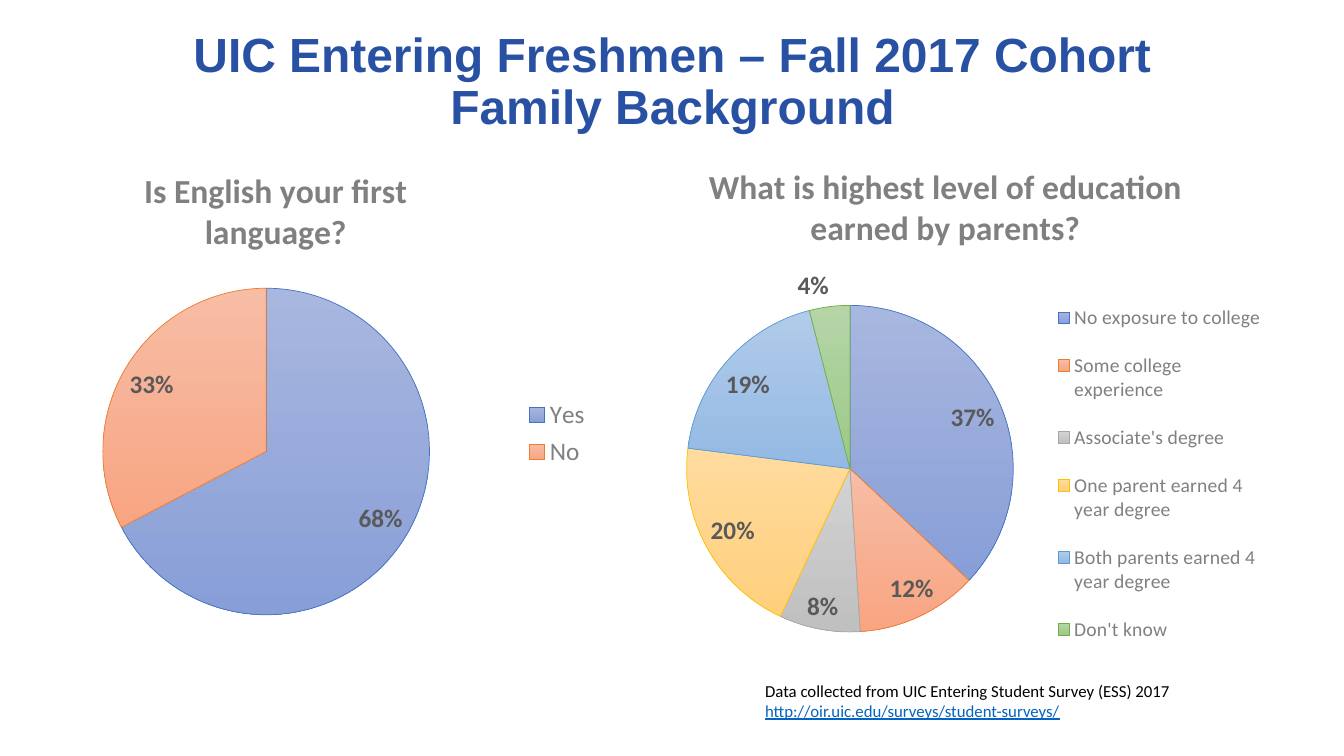
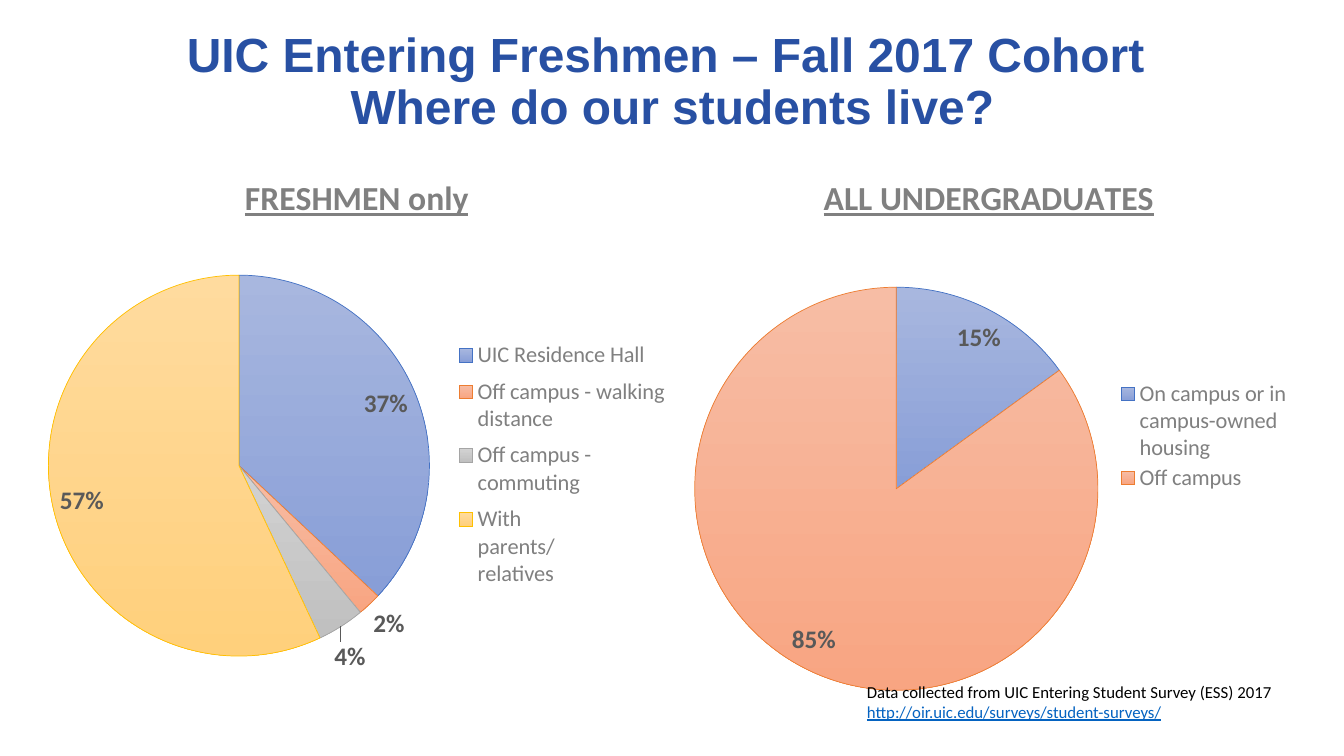
import dataclasses
import lxml.etree
import pptx
import pptx.chart.data
import pptx.dml.color
import pptx.enum.chart
import pptx.enum.text
import pptx.oxml.ns
import pptx.util

Inches = pptx.util.Inches
Pt = pptx.util.Pt


@dataclasses.dataclass(frozen=True)
class Theme:
    """Colours, fonts and type sizes shared by the slides."""
    navy: str = "2850A3"
    grey: str = "808080"
    dark: str = "595959"
    black: str = "000000"
    link: str = "0563C1"
    head: str = "Arial"
    body: str = "Calibri"
    title: float = 34.2
    topic: int = 24
    label: int = 18
    note: int = 12
    slices: tuple = (
        ("A8B7DF", "889ED7", "4472C4"),
        ("F7BDA5", "F8A582", "ED7D31"),
        ("D2D2D2", "C0C0C0", "A5A5A5"),
        ("FFDB9E", "FFD07C", "FFC000"),
        ("B1CBE9", "93B9E4", "5B9BD5"),
        ("B5D5A7", "9CC987", "70AD47"),
    )


def rgb(code):
    """Turn a hex code into a colour."""
    return pptx.dml.color.RGBColor.from_string(code)


def style(font, size, color, **look):
    """Set size, colour and further format values of a font."""
    look = {"name": Theme.body, "size": Pt(size), **look}
    for key, value in look.items():
        setattr(font, key, value)
    font.color.rgb = rgb(color)


def place(node, index, frame, box, inner=False):
    """Fix a chart part at a box given in slide inches."""
    tag = pptx.oxml.ns.qn
    for old in node.findall(tag("c:layout")):
        node.remove(old)
    layout = lxml.etree.Element(tag("c:layout"))
    manual = lxml.etree.SubElement(layout, tag("c:manualLayout"))
    left, top, width, height = frame
    shares = ((box[0] - left) / width, (box[1] - top) / height)
    if len(box) == 4:
        shares += (box[2] / width, box[3] / height)
    values = {"layoutTarget": "inner"} if inner else {}
    values.update(xMode="edge", yMode="edge")
    values.update((key, f"{part:.4f}") for key, part in zip("xywh", shares))
    for key, value in values.items():
        lxml.etree.SubElement(manual, tag("c:" + key)).set("val", value)
    node.insert(index, layout)


class Deck:
    """Holds the style and the current slide."""

    def __init__(self):
        """Start an empty wide presentation."""
        self.theme = Theme()
        self.show = pptx.Presentation()
        self.show.slide_width = Inches(13.33)
        self.show.slide_height = Inches(7.5)
        self.slide = None

    def page(self, topic):
        """Add a slide with its two-line title."""
        self.slide = self.show.slides.add_slide(self.show.slide_layouts[5])
        title = self.slide.shapes.title
        spot = {"left": 0.92, "top": 0.4, "width": 11.5, "height": 0.85}
        for key, value in spot.items():
            setattr(title, key, Inches(value))
        frame = title.text_frame
        frame.text = topic
        frame.word_wrap = True
        frame.auto_size = pptx.enum.text.MSO_AUTO_SIZE.NONE
        frame.vertical_anchor = pptx.enum.text.MSO_ANCHOR.MIDDLE
        para = frame.paragraphs[0]
        para.alignment = pptx.enum.text.PP_ALIGN.CENTER
        para.line_spacing = 0.9
        for run in para.runs:
            style(run.font, self.theme.title, self.theme.navy,
                  name=self.theme.head, bold=True)

    def pie(self, frame, topic, spot, disc, key, size, data, line=False):
        """Add a pie chart with title, labels and legend."""
        theme = self.theme
        source = pptx.chart.data.CategoryChartData()
        source.categories = list(data)
        source.add_series("Series 1", list(data.values()))
        chart = self.slide.shapes.add_chart(
            pptx.enum.chart.XL_CHART_TYPE.PIE,
            *map(Inches, frame), source).chart
        style(chart.font, 10, theme.black)

        chart.has_title = True
        text = chart.chart_title.text_frame
        text.text = topic
        for para in text.paragraphs:
            style(para.runs[0].font, theme.topic, theme.grey,
                  bold=True, underline=line)
        chart.chart_title.include_in_layout = False

        chart.has_legend = True
        legend = chart.legend
        legend.position = pptx.enum.chart.XL_LEGEND_POSITION.RIGHT
        legend.include_in_layout = False
        style(legend.font, size, theme.grey)

        plot = chart.plots[0]
        plot.vary_by_categories = True
        plot.has_data_labels = True
        labels = plot.data_labels
        whole = sum(data.values()) == 100
        look = {
            "show_percentage": whole,
            "show_value": not whole,
            "number_format": "0%" if whole else '0"%"',
            "number_format_is_linked": False,
            "position": pptx.enum.chart.XL_LABEL_POSITION.BEST_FIT,
        }
        for name, value in look.items():
            setattr(labels, name, value)
        style(labels.font, theme.label, theme.dark, bold=True)

        for index, (*tones, edge) in enumerate(theme.slices[:len(data)]):
            form = plot.series[0].points[index].format
            form.fill.gradient()
            form.fill.gradient_angle = 270
            for stop, tone in zip(form.fill.gradient_stops, tones):
                stop.color.rgb = rgb(tone)
            form.line.color.rgb = rgb(edge)
            form.line.width = Pt(0.5)

        root = chart.element.find(pptx.oxml.ns.qn("c:chart"))
        left, top, side = disc
        parts = (("title", 1, spot), ("legend", 1, key),
                 ("plotArea", 0, (left, top, side, side)))
        for name, index, box in parts:
            node = root.find(pptx.oxml.ns.qn("c:" + name))
            place(node, index, frame, box, name == "plotArea")

    def note(self, left, top):
        """Add the data source at the foot."""
        box = self.slide.shapes.add_textbox(
            *map(Inches, (left, top, 4.4, 0.5)))
        frame = box.text_frame
        frame.word_wrap = True
        frame.text = ("Data collected from UIC Entering Student Survey (ESS) 2017\n"
                      "http://oir.uic.edu/surveys/student-surveys/")
        tones = (self.theme.black, self.theme.link)
        for para, tone in zip(frame.paragraphs, tones):
            style(para.runs[0].font, self.theme.note, tone,
                  underline=tone == self.theme.link)


def main():
    """Build and save the slides."""
    deck = Deck()
    deck.page("UIC Entering Freshmen – Fall 2017 Cohort\vFamily Background")
    deck.pie((0.69, 1.6, 5.24, 5.35), "Is English your first\nlanguage?",
             (1.4, 1.66), (1.02, 2.86, 3.24), (5.15, 3.9, 0.75, 0.8), 18,
             {"Yes": 68, "No": 33})
    deck.pie((6.17, 1.46, 6.56, 5.29),
             "What is highest level of education\nearned by parents?",
             (7, 1.62), (6.81, 3.03, 3.24), (10.45, 2.8, 2.1, 3.8), 14,
             {"No exposure to college": 37, "Some college experience": 12,
              "Associate's degree": 8, "One parent earned 4 year degree": 20,
              "Both parents earned 4 year degree": 19, "Don't know": 4})
    deck.note(7.49, 6.7)

    deck.page("UIC Entering Freshmen – Fall 2017 Cohort \v"
              "Where do our students live?")
    deck.pie((0.34, 1.46, 6.41, 5.75), "FRESHMEN only", (2.37, 1.68),
             (0.48, 2.73, 3.78), (4.5, 3.3, 2.15, 2.35), 16,
             {"UIC Residence Hall": 37, "Off campus - walking distance": 2,
              "Off campus - commuting": 4, "With parents/relatives": 57},
             line=True)
    deck.pie((6.75, 1.46, 6.15, 5.76), "ALL UNDERGRADUATES", (8.11, 1.68),
             (6.89, 2.85, 4), (11.05, 3.75, 1.78, 1.15), 16,
             {"On campus or in campus-owned housing": 15, "Off campus": 85},
             line=True)
    deck.note(8.5, 6.71)
    deck.show.save("out.pptx")


if __name__ == "__main__":
    main()
